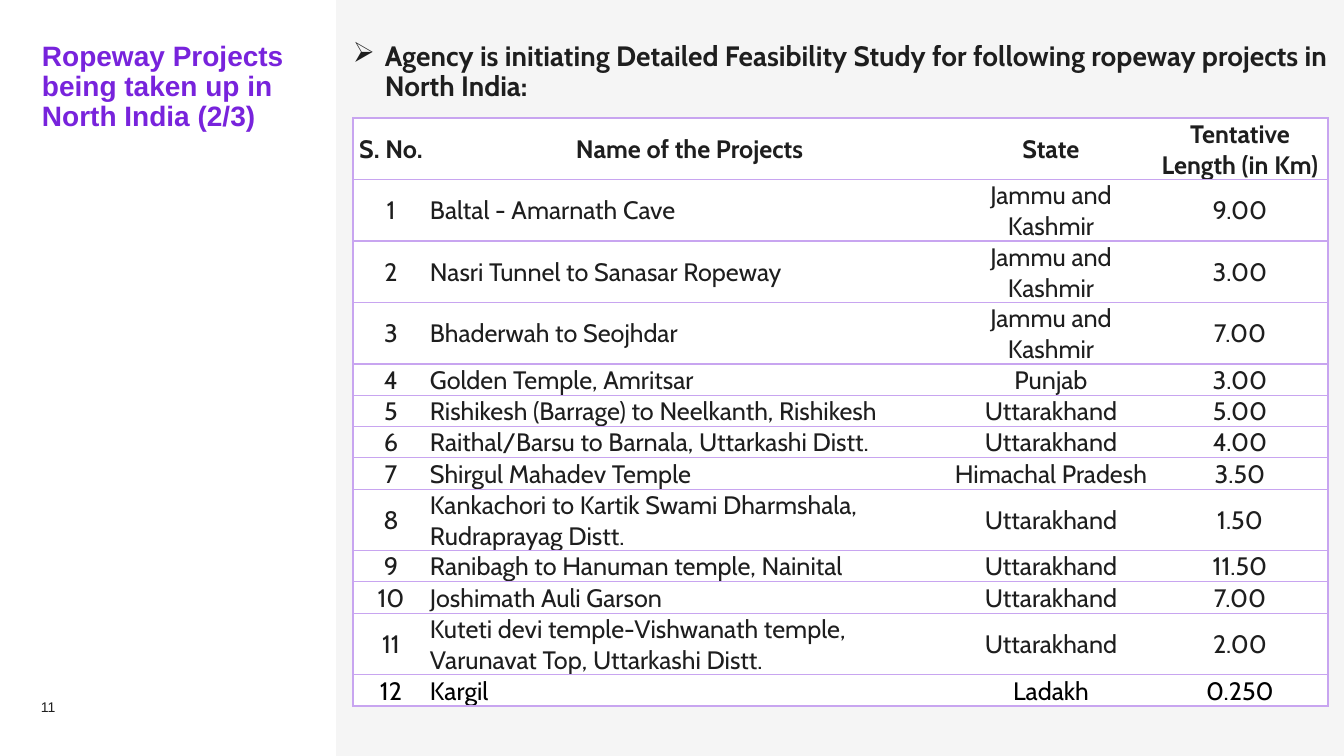
from lxml import etree
from pptx import Presentation
from pptx.dml.color import RGBColor
from pptx.enum.shapes import MSO_SHAPE
from pptx.enum.text import MSO_ANCHOR, PP_ALIGN
from pptx.oxml.ns import qn
from pptx.util import Emu, Pt

RECTANGLE = MSO_SHAPE.RECTANGLE
TOP, MIDDLE, BOTTOM = MSO_ANCHOR.TOP, MSO_ANCHOR.MIDDLE, MSO_ANCHOR.BOTTOM
LEFT, CENTER = PP_ALIGN.LEFT, PP_ALIGN.CENTER

SLIDE_WIDTH, SLIDE_HEIGHT = 1344, 756
SCALE = 12192000 / SLIDE_WIDTH
INK, PURPLE, LILAC, WHITE, GREY, BLACK = (
    "1E1E1E", "7823DC", "C8A5F0", "FFFFFF", "F5F5F5", "000000")
COLUMN_WIDTHS = (76, 521, 202, 176)
SINGLE_ROW, DOUBLE_ROW = 31, 61
TWO_LINE_ROWS = {0, 1, 2, 3, 8, 11}
NAME_COLUMN = 1
HEADINGS = ("S. No.", "Name of the Projects", "State", "Tentative Length (in Km)")
PROJECTS = (
    ("Baltal - Amarnath Cave", "Jammu and Kashmir", "9.00"),
    ("Nasri Tunnel to Sanasar Ropeway", "Jammu and Kashmir", "3.00"),
    ("Bhaderwah to Seojhdar", "Jammu and Kashmir", "7.00"),
    ("Golden Temple, Amritsar", "Punjab", "3.00"),
    ("Rishikesh (Barrage) to Neelkanth, Rishikesh", "Uttarakhand", "5.00"),
    ("Raithal/Barsu to Barnala, Uttarkashi Distt.", "Uttarakhand", "4.00"),
    ("Shirgul Mahadev Temple", "Himachal Pradesh", "3.50"),
    ("Kankachori to Kartik Swami Dharmshala, Rudraprayag Distt.", "Uttarakhand", "1.50"),
    ("Ranibagh to Hanuman temple, Nainital", "Uttarakhand", "11.50"),
    ("Joshimath Auli Garson", "Uttarakhand", "7.00"),
    ("Kuteti devi temple-Vishwanath temple, Varunavat Top, Uttarkashi Distt.",
     "Uttarakhand", "2.00"),
    ("Kargil", "Ladakh", "0.250"),
)


def px(length):
    """Turn pixels into EMU."""
    return Emu(round(length * SCALE))


def paint(color_format, color):
    """Give a fill or font colour its hex value."""
    color_format.rgb = RGBColor.from_string(color)


def style_text(paragraph, size, font_name, color, bold=False):
    """Format every run of a paragraph."""
    for run in paragraph.runs:
        run.font.size = Pt(size)
        run.font.name = font_name
        run.font.bold = bold
        paint(run.font.color, color)


def add_label(slide, box, text, size, font_name, color, bold=False, anchor=TOP, wrap=True):
    """Place a text box without margins and return its paragraph."""
    frame = slide.shapes.add_textbox(*map(px, box)).text_frame
    frame.margin_left = frame.margin_top = frame.margin_right = frame.margin_bottom = 0
    frame.word_wrap = wrap
    frame.vertical_anchor = anchor
    frame.text = text
    paragraph = frame.paragraphs[0]
    paragraph.line_spacing = 0.9
    style_text(paragraph, size, font_name, color, bold)
    return paragraph


def add_sidebar(slide, left, top, width, height):
    """Draw the white panel with the title and the page number."""
    panel = slide.shapes.add_shape(RECTANGLE, *map(px, (left, top, width, height)))
    panel.shadow.inherit = False
    panel.fill.solid()
    paint(panel.fill.fore_color, WHITE)
    panel.line.fill.background()
    add_label(slide, (left + 41, top + height - 70, 41, 30), "11", 10, "Arial", INK,
              anchor=BOTTOM, wrap=False)
    add_label(slide, (left + 42, top + 42, width - 84, 244),
              "Ropeway Projects being taken up in North India (2/3)",
              20, "Arial", PURPLE, bold=True)


def add_introduction(slide, left, top, width, height):
    """Write the bulleted sentence above the table."""
    introduction = add_label(
        slide, (left, top, width, height),
        "Agency is initiating Detailed Feasibility Study for following ropeway projects "
        "in North India:", 20, "Cabin", INK, bold=True)
    properties = introduction._p.get_or_add_pPr()
    properties.set("marL", str(px(32)))
    properties.set("indent", str(-px(32)))
    etree.SubElement(properties, qn("a:buChar"), char="➢")


def set_borders(cell, visible_sides):
    """Rule the visible sides of a cell and clear the others."""
    properties = cell._tc.get_or_add_tcPr()
    for position, side in enumerate("LRTB"):
        line = etree.Element(qn(f"a:ln{side}"), w=str(Pt(1)))
        if side in visible_sides:
            fill = etree.SubElement(line, qn("a:solidFill"))
            etree.SubElement(fill, qn("a:srgbClr"), val=LILAC)
        else:
            etree.SubElement(line, qn("a:noFill"))
        properties.insert(position, line)


def fill_cell(cell, text, alignment, color, bold, visible_sides):
    """Write and style one table cell."""
    cell.margin_left = cell.margin_top = cell.margin_right = px(1)
    cell.margin_bottom = 0
    cell.vertical_anchor = MIDDLE
    cell.fill.solid()
    paint(cell.fill.fore_color, WHITE)
    set_borders(cell, visible_sides)
    cell.text = text
    paragraph = cell.text_frame.paragraphs[0]
    paragraph.alignment = alignment
    style_text(paragraph, 18, "Cabin", color, bold)


def add_project_table(slide, left, top):
    """Build the numbered table of ropeway projects."""
    rows = [HEADINGS] + [(str(number), *project) for number, project in enumerate(PROJECTS, 1)]
    heights = [DOUBLE_ROW if index in TWO_LINE_ROWS else SINGLE_ROW for index in range(len(rows))]
    box = (left, top, sum(COLUMN_WIDTHS), sum(heights))
    table = slide.shapes.add_table(len(rows), len(COLUMN_WIDTHS), *map(px, box)).table
    table.first_row = table.horz_banding = False
    for column, width in zip(table.columns, COLUMN_WIDTHS):
        column.width = px(width)
    last_column, last_row = len(COLUMN_WIDTHS) - 1, len(rows) - 1
    for row_index, (values, height) in enumerate(zip(rows, heights)):
        table.rows[row_index].height = px(height)
        is_heading = row_index == 0
        color = BLACK if row_index == last_row else INK
        for column_index, value in enumerate(values):
            alignment = LEFT if column_index == NAME_COLUMN and not is_heading else CENTER
            sides = "TB" + {0: "L", last_column: "R"}.get(column_index, "")
            fill_cell(table.cell(row_index, column_index), value, alignment, color,
                      is_heading, sides)


def main():
    """Build the ropeway projects slide."""
    deck = Presentation()
    deck.slide_width, deck.slide_height = px(SLIDE_WIDTH), px(SLIDE_HEIGHT)
    slide = deck.slides.add_slide(deck.slide_layouts[6])
    slide.background.fill.solid()
    paint(slide.background.fill.fore_color, GREY)
    add_sidebar(slide, 0, 0, 336, SLIDE_HEIGHT)
    add_introduction(slide, 353, 42, 975, 122)
    add_project_table(slide, 353, 118)
    deck.save("out.pptx")


if __name__ == "__main__":
    main()
